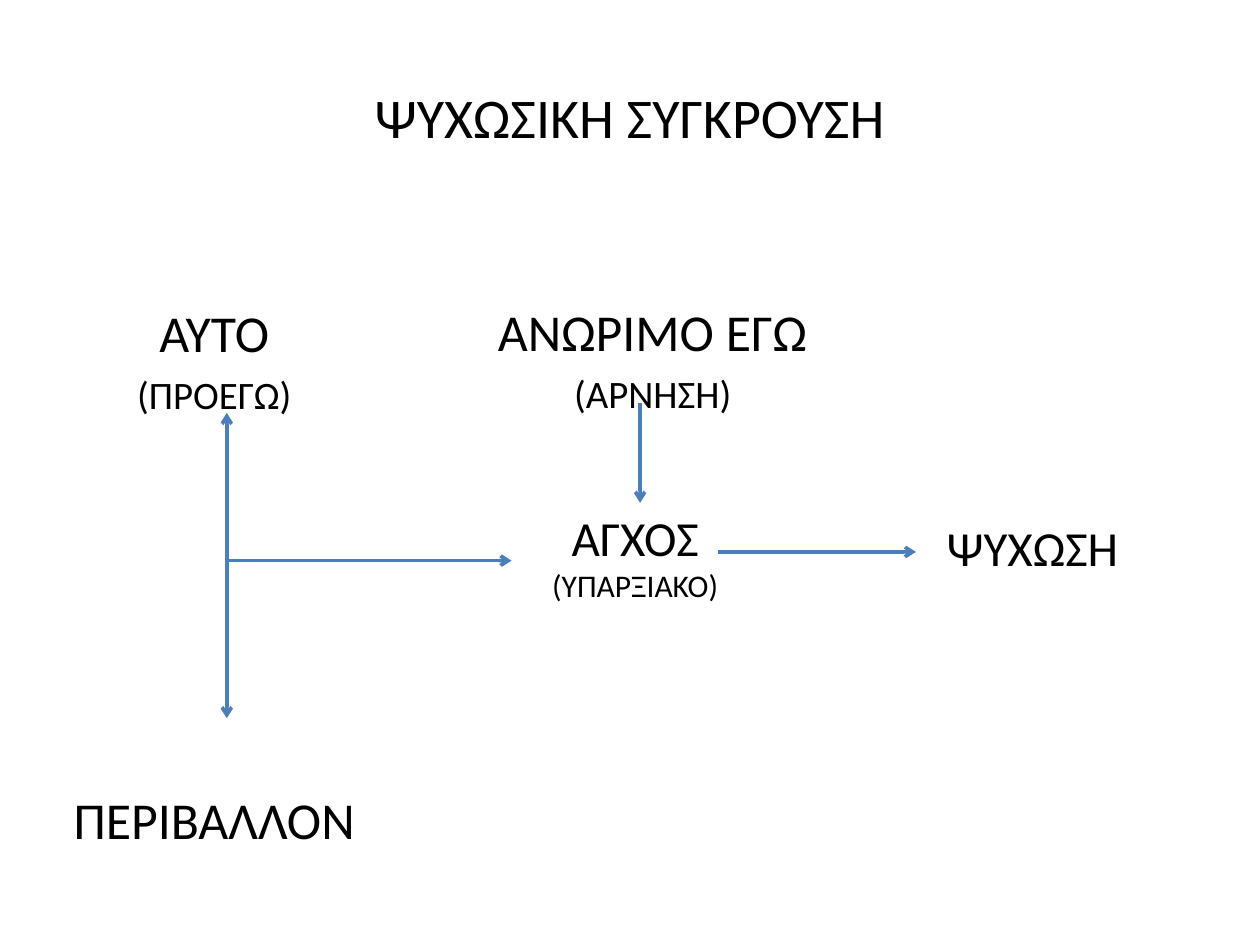
from lxml import etree
from pptx import Presentation
from pptx.dml.color import RGBColor
from pptx.enum.shapes import MSO_CONNECTOR
from pptx.enum.text import MSO_ANCHOR, MSO_AUTO_SIZE, PP_ALIGN
from pptx.oxml.ns import qn
from pptx.util import Pt

STRAIGHT = MSO_CONNECTOR.STRAIGHT
TOP, MIDDLE = MSO_ANCHOR.TOP, MSO_ANCHOR.MIDDLE
LEFT, CENTER = PP_ALIGN.LEFT, PP_ALIGN.CENTER
BLACK = RGBColor(0x00, 0x00, 0x00)
BLUE = RGBColor(0x4B, 0x7E, 0xBC)
FONT = "Calibri"

# Content: paragraphs are (text, size, space before)
TITLE = [("ΨΥΧΩΣΙΚΗ ΣΥΓΚΡΟΥΣΗ", 32, 0)]
FORCES = [
    ("ΑΥΤΟ", 29.6, 0),
    ("(ΠΡΟΕΓΩ)", 22.2, 4.4),
    ("ΠΕΡΙΒΑΛΛΟΝ", 29.6, 212),
]
EGO = [("ΑΝΩΡΙΜΟ ΕΓΩ", 29.6, 0), ("(ΑΡΝΗΣΗ)", 22.2, 4.4)]
ANXIETY = [("ΑΓΧΟΣ", 28, 0), ("(ΥΠΑΡΞΙΑΚΟ)", 18, 0)]
PSYCHOSIS = [("ΨΥΧΩΣΗ", 28, 0)]

# Areas: (left, top, width, height)
TITLE_AREA = (36, 21.6, 648, 90)
FORCES_TOP = 168
FORCES_AREA = (30, FORCES_TOP, 185, 322)
# Labels: (paragraphs, area, alignment)
LABELS = [
    (EGO, (273, FORCES_TOP, 200, 75), CENTER),
    (ANXIETY, (298, 286.5, 130, 63.4), CENTER),
    (PSYCHOSIS, (534, 292.3, 146, 41), LEFT),
]
# Arrows: (start, end, arrowhead at both ends)
AXIS_X, BRANCH_Y = 129.6, 320.4
ARROWS = [
    ((AXIS_X, 236), (AXIS_X, 410.4), True),
    ((AXIS_X, BRANCH_Y), (292.3, BRANCH_Y), False),
    ((365.8, 230.4), (365.8, 287.3), False),
    ((410.4, 315.4), (523.4, 315.4), False),
]


def place(box, left, top, width, height):
    box.left, box.top = Pt(left), Pt(top)
    box.width, box.height = Pt(width), Pt(height)


def write(box, paragraphs, align=CENTER, anchor=TOP):
    frame = box.text_frame
    frame.word_wrap = True
    frame.auto_size = MSO_AUTO_SIZE.NONE
    frame.vertical_anchor = anchor
    for index, (text, size, before) in enumerate(paragraphs):
        para = frame.add_paragraph() if index else frame.paragraphs[0]
        para.alignment = align
        para.space_before = Pt(before)
        props = para._p.get_or_add_pPr()
        props.set("marL", "0")
        props.set("indent", "0")
        etree.SubElement(props, qn("a:buNone"))
        span = para.add_run()
        span.text = text
        span.font.name = FONT
        span.font.size = Pt(size)
        span.font.color.rgb = BLACK


def add_arrow(page, start, end, both_ends):
    arrow = page.shapes.add_connector(STRAIGHT, *map(Pt, start + end))
    arrow.line.color.rgb = BLUE
    arrow.line.width = Pt(2)
    line = arrow.line._get_or_add_ln()
    for tag in ("a:headEnd", "a:tailEnd") if both_ends else ("a:tailEnd",):
        etree.SubElement(line, qn(tag), type="arrow")
    etree.SubElement(arrow._element.spPr, qn("a:effectLst"))


def main():
    deck = Presentation()
    deck.slide_width, deck.slide_height = Pt(720), Pt(540)
    page = deck.slides.add_slide(deck.slide_layouts[1])

    # Title and the column of opposing forces
    title, body = page.shapes.title, page.placeholders[1]
    place(title, *TITLE_AREA)
    write(title, TITLE, anchor=MIDDLE)
    place(body, *FORCES_AREA)
    write(body, FORCES)

    # Ego and outcomes
    for paragraphs, area, align in LABELS:
        write(page.shapes.add_textbox(*map(Pt, area)), paragraphs, align=align)

    # Arrows
    for start, end, both_ends in ARROWS:
        add_arrow(page, start, end, both_ends)

    deck.save("out.pptx")


if __name__ == "__main__":
    main()
